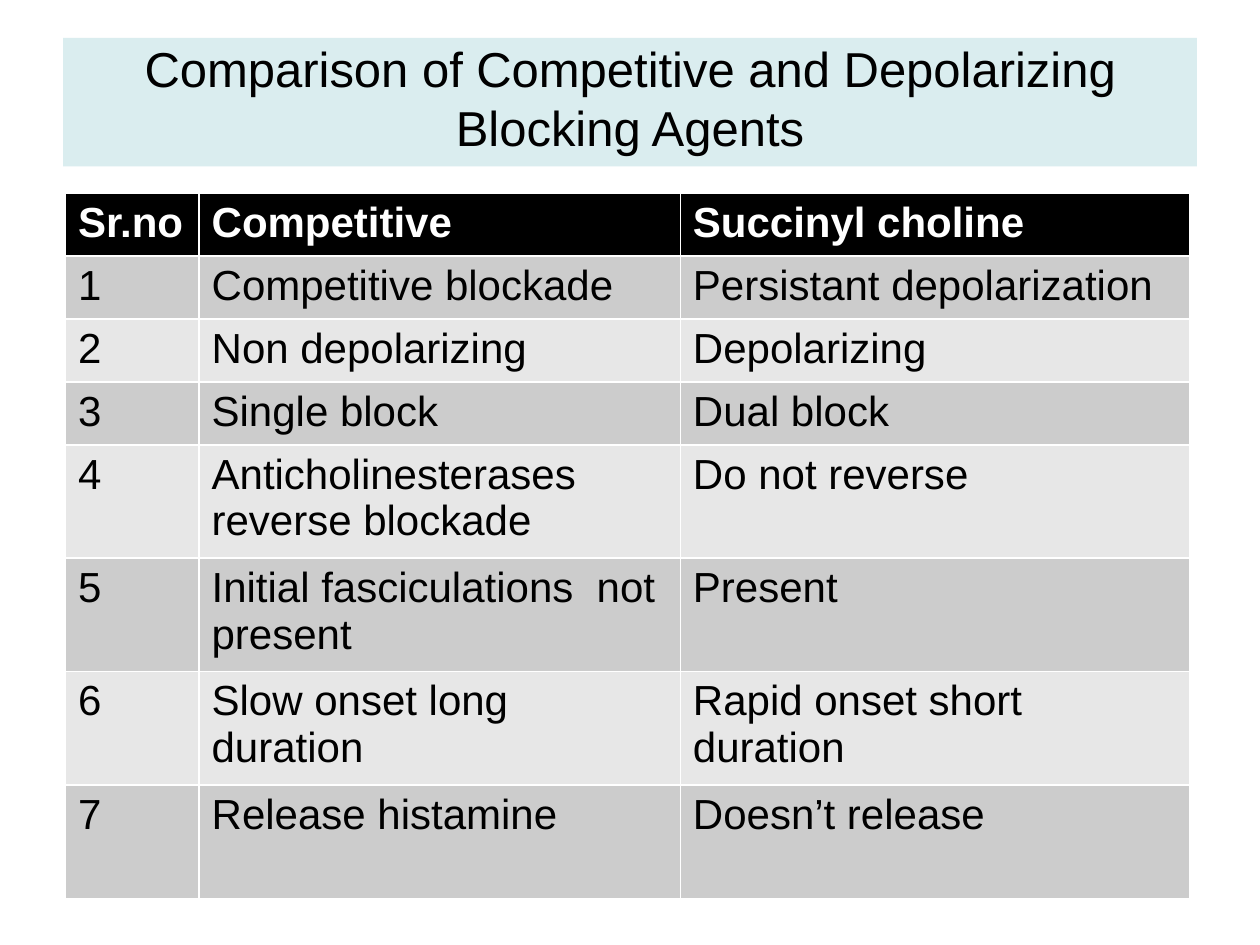
import pptx
import pptx.dml.color
import pptx.enum.text
import pptx.util

RGBColor = pptx.dml.color.RGBColor
Inches = pptx.util.Inches
Pt = pptx.util.Pt

BLACK = RGBColor(0x00, 0x00, 0x00)
WHITE = RGBColor(0xFF, 0xFF, 0xFF)
PALE_TEAL = RGBColor(0xDA, 0xED, 0xEF)
BANDS = (RGBColor(0xE7, 0xE7, 0xE7), RGBColor(0xCC, 0xCC, 0xCC))

FONT = "Arial"
TITLE = "Comparison of Competitive and Depolarizing Blocking Agents"
HEADER = ("Sr.no", "Competitive", "Succinyl choline")
COMPARISONS = (
    ("Competitive blockade", "Persistant depolarization"),
    ("Non depolarizing", "Depolarizing"),
    ("Single block", "Dual block"),
    ("Anticholinesterases reverse blockade", "Do not reverse"),
    ("Initial fasciculations  not present", "Present"),
    ("Slow onset long duration", "Rapid onset short duration"),
    ("Release histamine", "Doesn’t release"),
)
COLUMN_WIDTHS = (1.06, 3.82, 4.04)
SHORT_ROW, TALL_ROW = 0.5, 0.9
ROW_HEIGHTS = [SHORT_ROW] * 4 + [TALL_ROW] * 4


def format_font(p, size, color, bold=False):
    p.font.name = FONT
    p.font.size = Pt(size)
    p.font.color.rgb = color
    p.font.bold = bold


def fill_title(prs, sp):
    """Place the title as a centred band with equal side margins."""
    sp.left, sp.top = int(prs.slide_width * 0.05), int(prs.slide_height * 0.04)
    sp.width, sp.height = int(prs.slide_width * 0.9), Inches(1.02)
    sp.fill.solid()
    sp.fill.fore_color.rgb = PALE_TEAL
    tf = sp.text_frame
    tf.text = TITLE
    tf.word_wrap = True
    tf.auto_size = pptx.enum.text.MSO_AUTO_SIZE.NONE
    tf.vertical_anchor = pptx.enum.text.MSO_ANCHOR.MIDDLE
    tf.margin_bottom = Inches(0.13)
    p = tf.paragraphs[0]
    p.alignment = pptx.enum.text.PP_ALIGN.CENTER
    format_font(p, 28, BLACK)


def fill_cell(cell, text, fill, color, bold):
    cell.fill.solid()
    cell.fill.fore_color.rgb = fill
    cell.text = text
    format_font(cell.text_frame.paragraphs[0], 24, color, bold)


def add_comparison_table(slide):
    rows = [HEADER] + [(str(n), *pair) for n, pair in enumerate(COMPARISONS, 1)]
    table = slide.shapes.add_table(
        len(rows), len(HEADER), Inches(0.52), Inches(1.53),
        Inches(sum(COLUMN_WIDTHS)), Inches(sum(ROW_HEIGHTS))).table
    for column, width in zip(table.columns, COLUMN_WIDTHS):
        column.width = Inches(width)
    for i, texts in enumerate(rows):
        table.rows[i].height = Inches(ROW_HEIGHTS[i])
        is_header = i == 0
        fill = BLACK if is_header else BANDS[i % 2]
        color = WHITE if is_header else BLACK
        for j, text in enumerate(texts):
            fill_cell(table.cell(i, j), text, fill, color, is_header)


def main():
    prs = pptx.Presentation()
    prs.slide_width, prs.slide_height = Inches(10), Inches(7.5)
    slide = prs.slides.add_slide(prs.slide_layouts.get_by_name("Title Only"))
    fill_title(prs, slide.shapes.title)
    add_comparison_table(slide)
    prs.save("out.pptx")


if __name__ == "__main__":
    main()
